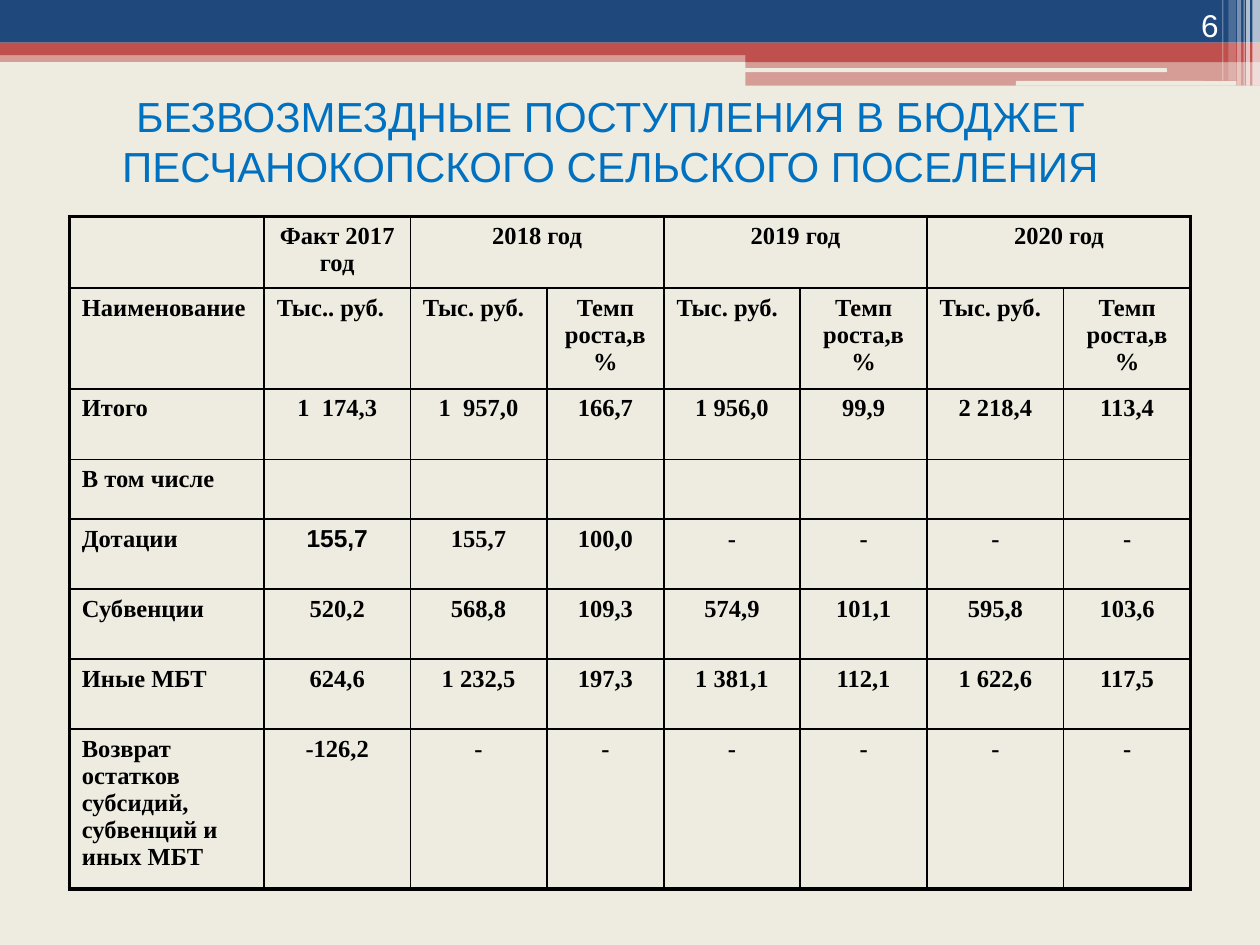
from lxml import etree
from pptx import Presentation
from pptx import util as u
from pptx.dml.color import RGBColor
from pptx.enum import shapes, text
from pptx.oxml.ns import qn

Pt = u.Pt
COLORS = {"cream": "EEECE1", "navy": "1F497D", "red": "C0504D",
          "white": "FFFFFF", "blue": "0070C0", "black": "000000"}
LEFT, CENTER, RIGHT = text.PP_ALIGN.LEFT, text.PP_ALIGN.CENTER, text.PP_ALIGN.RIGHT


def write(frame, words, size=14, font="Times New Roman", color="black",
          bold=False, align=CENTER):
    para = frame.paragraphs[0]
    para.alignment = align
    span = para.add_run()
    span.text = words
    span.font.size = Pt(size)
    span.font.name = font
    span.font.bold = bold
    span.font.color.rgb = RGBColor.from_string(COLORS[color])


def set_border(cell, side, width):
    """Draw one black edge of a cell; side is L, R, T or B."""
    line = etree.SubElement(cell._tc.get_or_add_tcPr(), qn(f"a:ln{side}"), w=str(Pt(width)))
    fill = etree.SubElement(line, qn("a:solidFill"))
    etree.SubElement(fill, qn("a:srgbClr"), val=COLORS["black"])


deck = Presentation()
deck.slide_width, deck.slide_height = Pt(720), Pt(540)
page = deck.slides.add_slide(deck.slide_layouts[6])
page.background.fill.solid()
page.background.fill.fore_color.rgb = RGBColor.from_string(COLORS["cream"])

# Header bands and stripes: left, top, width, height, colour, opacity in percent
RECT, ROUND = shapes.MSO_SHAPE.RECTANGLE, shapes.MSO_SHAPE.ROUNDED_RECTANGLE
bands = [
    (RECT, 0, 28.8, 720, 6.6, "red", 50),
    (RECT, 0, 0, 720, 24.4, "navy", 100),
    (RECT, 0, 24.4, 720, 7.2, "red", 100),
    (RECT, 426, 28.3, 294, 7.2, "red", 100),
    (RECT, 426, 34.7, 294, 14.2, "red", 50),
    (ROUND, 425.6, 39, 241.2, 2.2, "cream", 100),
    (ROUND, 580.5, 46.3, 126, 2.7, "cream", 100),
    (RECT, 715.7, 0, 4.3, 49, "white", 65),
    (RECT, 712.1, 0, 2.2, 49, "white", 65),
    (RECT, 710.6, 0, 0.7, 49, "white", 60),
    (RECT, 707, 0, 2.2, 49, "white", 40),
    (RECT, 702, 0, 4.3, 46.1, "white", 20),
    (RECT, 698.4, 0, 0.7, 46.1, "white", 30),
]
for kind, left, top, width, height, color, opacity in bands:
    band = page.shapes.add_shape(kind, Pt(left), Pt(top), Pt(width), Pt(height))
    band.shadow.inherit = False
    band.line.fill.background()
    band.fill.solid()
    band.fill.fore_color.rgb = RGBColor.from_string(COLORS[color])
    if opacity < 100:
        tint = band.fill._xPr.find(".//" + qn("a:srgbClr"))
        etree.SubElement(tint, qn("a:alpha"), val=str(opacity * 1000))

title = page.shapes.add_textbox(0, Pt(54.7), Pt(697.7), Pt(51.1)).text_frame
title.word_wrap = True
title.vertical_anchor = text.MSO_ANCHOR.MIDDLE
write(title, "БЕЗВОЗМЕЗДНЫЕ ПОСТУПЛЕНИЯ В БЮДЖЕТ ПЕСЧАНОКОПСКОГО СЕЛЬСКОГО ПОСЕЛЕНИЯ",
      size=24, font="Arial", color="blue")

number = page.shapes.add_textbox(Pt(643.7), 0, Pt(59.8), Pt(28.8)).text_frame
number.word_wrap = True
number.vertical_anchor = text.MSO_ANCHOR.BOTTOM
write(number, "6", size=18, font="Arial", color="white", align=RIGHT)

AMOUNT, GROWTH = "Тыс. руб.", "Темп роста,в %"
rows = [
    ["", "Факт 2017 год", "2018 год", "", "2019 год", "", "2020 год", ""],
    ["Наименование", "Тыс.. руб."] + [AMOUNT, GROWTH] * 3,
    ["Итого", "1  174,3", "1  957,0", "166,7", "1 956,0", "99,9", "2 218,4", "113,4"],
    ["В том числе"] + [""] * 7,
    ["Дотации", "155,7", "155,7", "100,0"] + ["-"] * 4,
    ["Субвенции", "520,2", "568,8", "109,3", "574,9", "101,1", "595,8", "103,6"],
    ["Иные МБТ", "624,6", "1 232,5", "197,3", "1 381,1", "112,1", "1 622,6", "117,5"],
    ["Возврат остатков субсидий, субвенций и иных МБТ", "-126,2"] + ["-"] * 6,
]
widths = [111.4, 83.5, 78, 67, 77.8, 72.6, 78, 72.6]
heights = [40.3, 53.4, 40.3, 34.2, 40, 40, 40, 84.6]
grid = page.shapes.add_table(len(rows), len(widths), Pt(39.6), Pt(123.7),
                             Pt(sum(widths)), Pt(sum(heights))).table
grid.first_row = grid.horz_banding = False
for column, width in zip(grid.columns, widths):
    column.width = Pt(width)
for row, height in zip(grid.rows, heights):
    row.height = Pt(height)
for c in (2, 4, 6):
    grid.cell(0, c).merge(grid.cell(0, c + 1))

last_row, last_column = len(rows) - 1, len(widths) - 1
for r, row in enumerate(rows):
    for c, words in enumerate(row):
        cell = grid.cell(r, c)
        outer = {"L": c == 0, "R": c == last_column or (r == 0 and c == last_column - 1),
                 "T": r == 0, "B": r == last_row}
        for side, is_outer in outer.items():
            set_border(cell, side, 2.25 if is_outer else 1)
        cell.fill.background()
        if words:
            is_label = c == 0 or (r == 1 and words != GROWTH)
            write(cell.text_frame, words, bold=True, align=LEFT if is_label else CENTER,
                  font="Arial" if (r, c) == (4, 1) else "Times New Roman")

deck.save("out.pptx")
